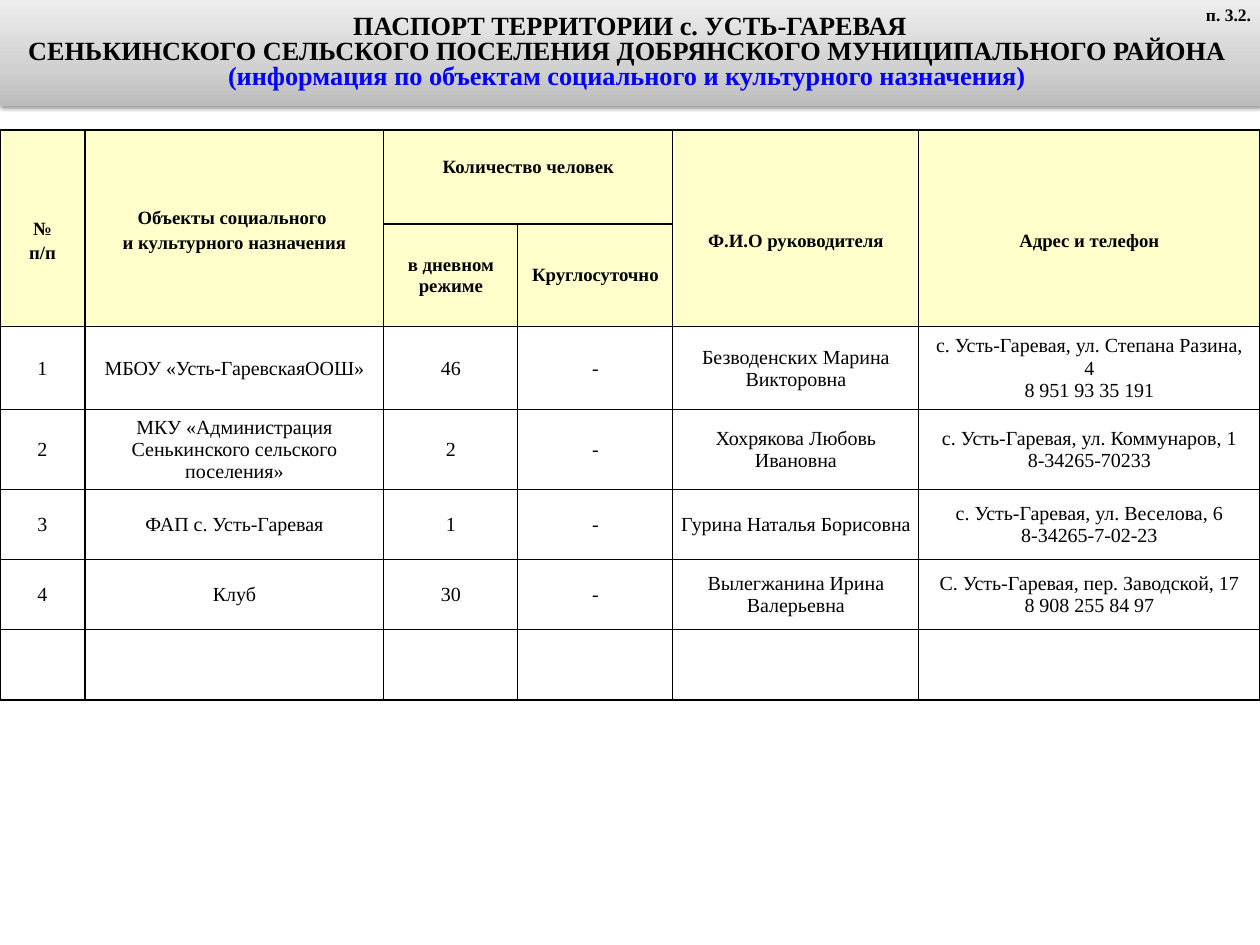
from pptx import Presentation
from pptx.dml.color import RGBColor
from pptx.enum.text import MSO_ANCHOR, MSO_AUTO_SIZE, PP_ALIGN
from pptx.oxml import parse_xml
from pptx.oxml.ns import nsdecls
from pptx.util import Pt

PX = 10160  # EMU per px, 90 px to the inch
BLACK = RGBColor(0x00, 0x00, 0x00)
BLUE = RGBColor(0x00, 0x00, 0xFF)
CREAM = RGBColor(0xFF, 0xFF, 0xCC)
WHITE = RGBColor(0xFF, 0xFF, 0xFF)


def write(tf, text, size=16, bold=False, align=PP_ALIGN.CENTER, gap=0,
          line_spacing=None, colors=()):
    """Fill a text frame, one paragraph per line of text."""
    tf.word_wrap = True
    for i, line in enumerate(text.split("\n")):
        p = tf.paragraphs[0] if i == 0 else tf.add_paragraph()
        p.alignment = align
        p.space_before = Pt(gap if i else 0)
        p.line_spacing = line_spacing
        r = p.add_run()
        r.text = line
        r.font.name = "Times New Roman"
        r.font.size = Pt(size)
        r.font.bold = bold
        r.font.color.rgb = colors[i] if colors else BLACK


def set_borders(cell, **widths):
    """Draw black borders; widths in points by side L, R, T, B."""
    tcPr = cell._tc.get_or_add_tcPr()
    for side, width in widths.items():
        tcPr.append(parse_xml(
            f'<a:ln{side} {nsdecls("a")} w="{Pt(width)}"><a:solidFill>'
            f'<a:srgbClr val="{BLACK}"/></a:solidFill></a:ln{side}>'))


prs = Presentation()
prs.slide_width, prs.slide_height = 1260 * PX, 945 * PX
s = prs.slides.add_slide(prs.slide_layouts[5])

# Table
columns = [85, 299, 134, 155, 246, 341]
heights = [94, 103, 83, 80, 70, 70, 70]
rows = [
    ["№\nп/п", "Объекты социального \nи культурного назначения",
     "Количество человек", "", "Ф.И.О руководителя", "Адрес и телефон"],
    ["", "", "в дневном режиме", "Круглосуточно", "", ""],
    ["1", "МБОУ «Усть-ГаревскаяООШ»", "46", "-", "Безводенских Марина Викторовна",
     "с. Усть-Гаревая, ул. Степана Разина, 4\n8 951 93 35 191"],
    ["2", "МКУ «Администрация Сенькинского сельского поселения»", "2", "-",
     "Хохрякова Любовь Ивановна",
     "с. Усть-Гаревая, ул. Коммунаров, 1\n8-34265-70233"],
    ["3", "ФАП с. Усть-Гаревая", "1", "-", "Гурина Наталья Борисовна",
     "с. Усть-Гаревая, ул. Веселова, 6\n8-34265-7-02-23"],
    ["4", "Клуб", "30", "-", "Вылегжанина Ирина Валерьевна",
     "С. Усть-Гаревая, пер. Заводской, 17\n8 908 255 84 97"],
    [""] * 6,
]
table = s.shapes.add_table(len(rows), len(columns), 0, 130 * PX,
                           sum(columns) * PX, sum(heights) * PX).table
table.first_row = table.horz_banding = False
for column, width in zip(table.columns, columns):
    column.width = width * PX
for row, height in zip(table.rows, heights):
    row.height = height * PX

# Header spans
table.cell(0, 2).merge(table.cell(0, 3))
for c in (0, 1, 4, 5):
    table.cell(0, c).merge(table.cell(1, c))

# Cells
last_row, last_column = len(rows) - 1, len(columns) - 1
for i, texts in enumerate(rows):
    for j, text in enumerate(texts):
        cell = table.cell(i, j)
        header = i < 2
        tight = i == 4 and j >= 4
        cell.vertical_anchor = MSO_ANCHOR.MIDDLE
        cell.margin_left = cell.margin_right = (6 if tight else 13) * PX
        cell.margin_top = cell.margin_bottom = (0 if tight else 6) * PX
        set_borders(cell,
                    L=2.25 if j == 0 else 1,
                    R=2.25 if j == last_column else 1,
                    T=2.25 if i == 0 else 1,
                    B=2.25 if i == last_row else 1)
        cell.fill.solid()
        cell.fill.fore_color.rgb = CREAM if header else WHITE
        if text:
            write(cell.text_frame, text, size=15 if header else 16,
                  bold=header, gap=3 if header else 0)

# Header texts sit off the middle of their cells
for c, top in {0: 31, 1: 10, 4: 31, 5: 31}.items():
    table.cell(0, c).margin_top = top * PX
table.cell(0, 2).margin_bottom = 26 * PX

# Title band with gradient and shadow
title = s.shapes.title
title.left, title.top, title.width, title.height = 0, 0, 1260 * PX, 106 * PX
stops = "".join(f'<a:gs pos="{pos}000"><a:srgbClr val="{color}"/></a:gs>'
                for pos, color in ((0, "BCBCBC"), (35, "D0D0D0"), (100, "EDEDED")))
for xml in (
    f'<a:prstGeom {nsdecls("a")} prst="rect"><a:avLst/></a:prstGeom>',
    f'<a:gradFill {nsdecls("a")} rotWithShape="1"><a:gsLst>{stops}</a:gsLst>'
    '<a:lin ang="16200000" scaled="1"/></a:gradFill>',
    f'<a:effectLst {nsdecls("a")}><a:outerShdw blurRad="40000" dist="20000" '
    'dir="5400000" rotWithShape="0"><a:srgbClr val="000000">'
    '<a:alpha val="38000"/></a:srgbClr></a:outerShdw></a:effectLst>',
):
    title._element.spPr.append(parse_xml(xml))
tf = title.text_frame
tf.auto_size = MSO_AUTO_SIZE.NONE
tf.vertical_anchor = MSO_ANCHOR.MIDDLE
write(tf, "ПАСПОРТ ТЕРРИТОРИИ с. УСТЬ-ГАРЕВАЯ\n"
      "СЕНЬКИНСКОГО СЕЛЬСКОГО ПОСЕЛЕНИЯ ДОБРЯНСКОГО МУНИЦИПАЛЬНОГО РАЙОНА \n"
      "(информация по объектам социального и культурного назначения) ",
      size=21, bold=True, line_spacing=0.8, colors=(BLACK, BLACK, BLUE))

# Section number
number = s.shapes.add_textbox(1189 * PX, 0, 71 * PX, 30 * PX)
write(number.text_frame, "п. 3.2.", size=14, bold=True, align=PP_ALIGN.RIGHT)

prs.save("out.pptx")
